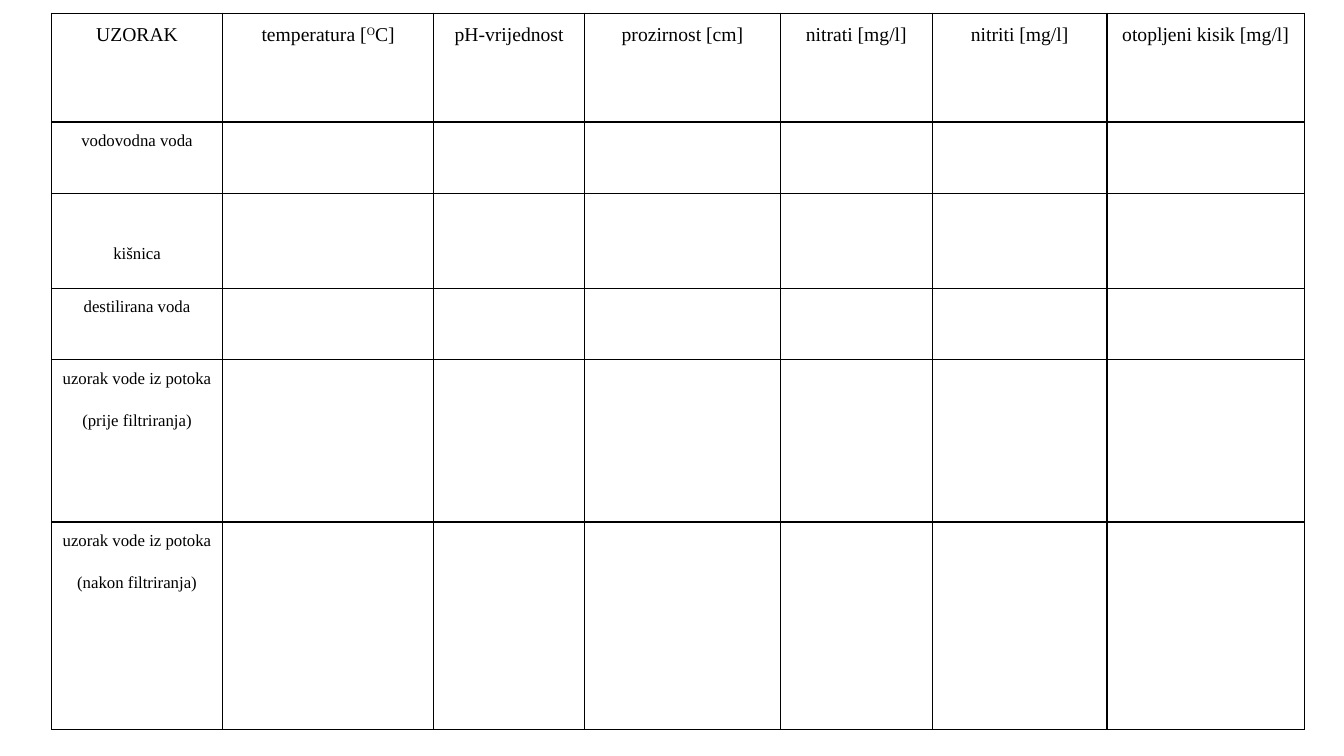
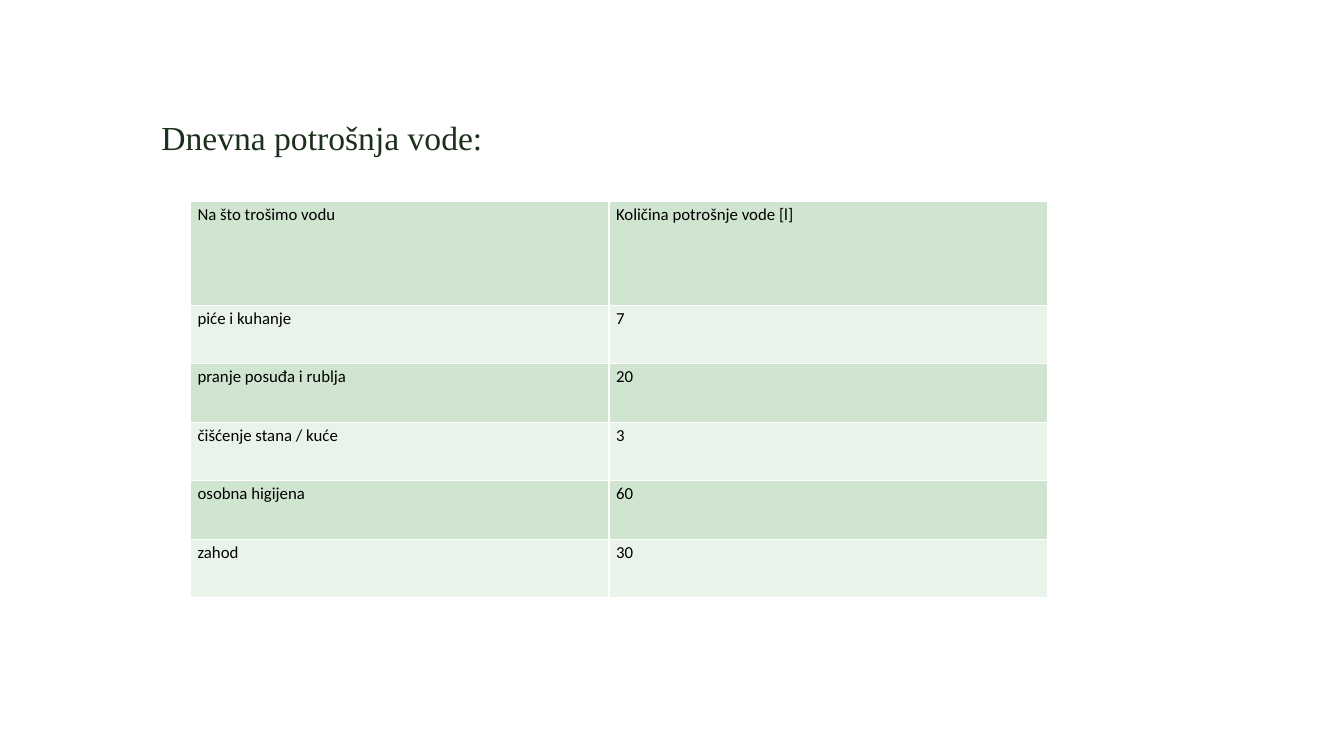
from lxml import etree
from pptx import Presentation, util as u
from pptx.dml.color import RGBColor
from pptx.enum import text as t
from pptx.oxml import ns

SERIF, SANS = "Times New Roman", "Calibri"
BLACK, WHITE, DARK = "000000", "FFFFFF", "1C311C"
BANDS = ["CFE5D0", "E9F3E9"]

HEADS = ["UZORAK", [("temperatura [", 0), ("O", 30), ("C]", 0)],
         "pH-vrijednost", "prozirnost [cm]", "nitrati [mg/l]",
         "nitriti [mg/l]", "otopljeni kisik [mg/l]"]
WATERS = ["vodovodna voda", "kišnica", "destilirana voda",
          "uzorak vode iz potoka\n(prije filtriranja)",
          "uzorak vode iz potoka\n(nakon filtriranja)"]
USES = [("Na što trošimo vodu", "Količina potrošnje vode [l]"),
        ("piće i kuhanje", "7"), ("pranje posuđa i rublja", "20"),
        ("čišćenje stana / kuće", "3"), ("osobna higijena", "60"),
        ("zahod", "30")]
SAMPLES = [HEADS] + [[name] + [""] * (len(HEADS) - 1) for name in WATERS]
TITLE = "Dnevna potrošnja vode:"


def rgb(code):
    return RGBColor.from_string(code)


def write(frame, body, size=12, font=SERIF, color=BLACK, align="LEFT",
          line=None, before=None, after=None):
    lines = [[(s, 0)] for s in body.split("\n")] if isinstance(body, str) else [body]
    for i, runs in enumerate(lines):
        para = frame.paragraphs[0] if i == 0 else frame.add_paragraph()
        para.alignment = getattr(t.PP_ALIGN, align)
        para.line_spacing = line
        if before is not None:
            para.space_before = u.Pt(before)
        if after is not None:
            para.space_after = u.Pt(after)
        for words, base in runs:
            if not words:
                continue
            run = para.add_run()
            run.text = words
            run.font.size = u.Pt(size)
            run.font.name = font
            run.font.color.rgb = rgb(color)
            if base:
                run.font._element.set("baseline", str(base * 1000))


def border(cell, color):
    props = cell._tc.get_or_add_tcPr()
    for i, side in enumerate(("lnL", "lnR", "lnT", "lnB")):
        edge = etree.Element(ns.qn("a:" + side), w=str(u.Pt(1)))
        fill = etree.SubElement(edge, ns.qn("a:solidFill"))
        etree.SubElement(fill, ns.qn("a:srgbClr"), val=color)
        props.insert(i, edge)


def grid(slide, rows, left, top, wides, highs, pad, edge, bands, **style):
    box = slide.shapes.add_table(
        len(rows), len(wides), u.Inches(left), u.Inches(top),
        u.Inches(sum(wides)), u.Inches(sum(highs)))
    table = box.table
    table.first_row = table.horz_banding = False
    for col, wide in zip(table.columns, wides):
        col.width = u.Inches(wide)
    for r, (row, high) in enumerate(zip(rows, highs)):
        table.rows[r].height = u.Inches(high)
        for c, body in enumerate(row):
            cell = table.cell(r, c)
            cell.margin_left = cell.margin_right = u.Inches(pad)
            cell.margin_top = cell.margin_bottom = 0
            cell.fill.solid()
            cell.fill.fore_color.rgb = rgb(bands[r % len(bands)])
            border(cell, edge)
            size = 14 if r == 0 and rows is SAMPLES else 12
            write(cell.text_frame, body, size=size, **style)
    return table


def samples(deck):
    slide = deck.slides.add_slide(deck.slide_layouts[6])
    table = grid(slide, SAMPLES, 0.51, 0.13,
                 [1.7, 2.09, 1.5, 1.94, 1.51, 1.73, 1.96],
                 [1.08, 0.71, 0.94, 0.71, 1.61, 2.06],
                 0.05, BLACK, [WHITE], align="CENTER", line=1.5, after=10)
    table.cell(2, 0).margin_top = u.Inches(0.41)


def usage(deck):
    slide = deck.slides.add_slide(deck.slide_layouts[1])
    head = slide.shapes.title._element
    head.getparent().remove(head)
    body = slide.placeholders[1]
    body.left, body.top, body.width, body.height = map(
        u.Inches, (1.5, 1.11, 10.74, 5.64))
    write(body.text_frame, TITLE, size=24, color=DARK, before=10)
    props = body.text_frame.paragraphs[0]._p.get_or_add_pPr()
    props.set("marL", "0")
    props.set("indent", "0")
    etree.SubElement(props, ns.qn("a:buNone"))
    grid(slide, USES, 1.89, 2, [4.15, 4.35], [1.03] + [0.58] * 5,
         0.07, WHITE, BANDS, font=SANS, line=1.15, before=1.6, after=10)


def main():
    deck = Presentation()
    deck.slide_width, deck.slide_height = u.Inches(13.33), u.Inches(7.5)
    samples(deck)
    usage(deck)
    deck.save("out.pptx")


if __name__ == "__main__":
    main()
